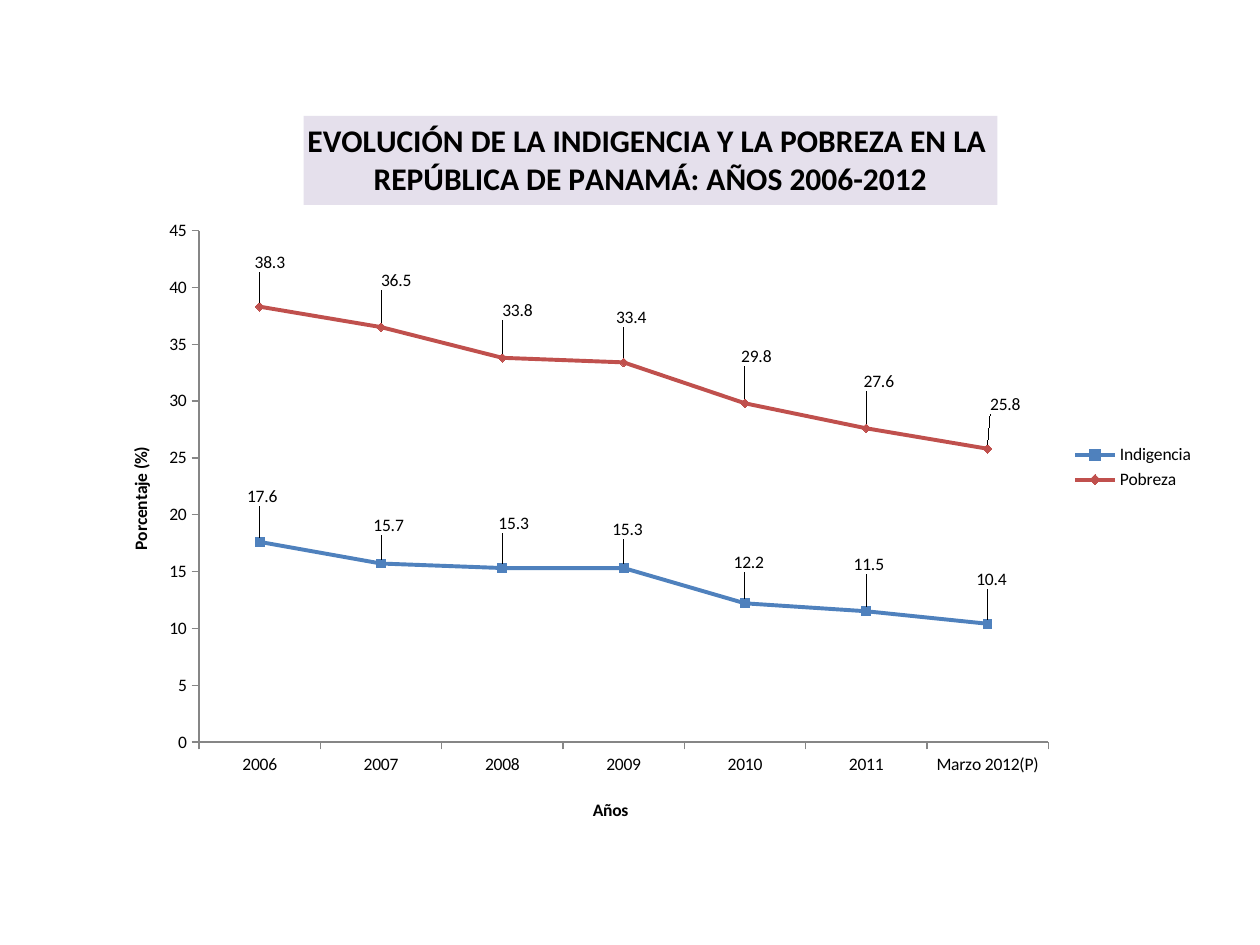
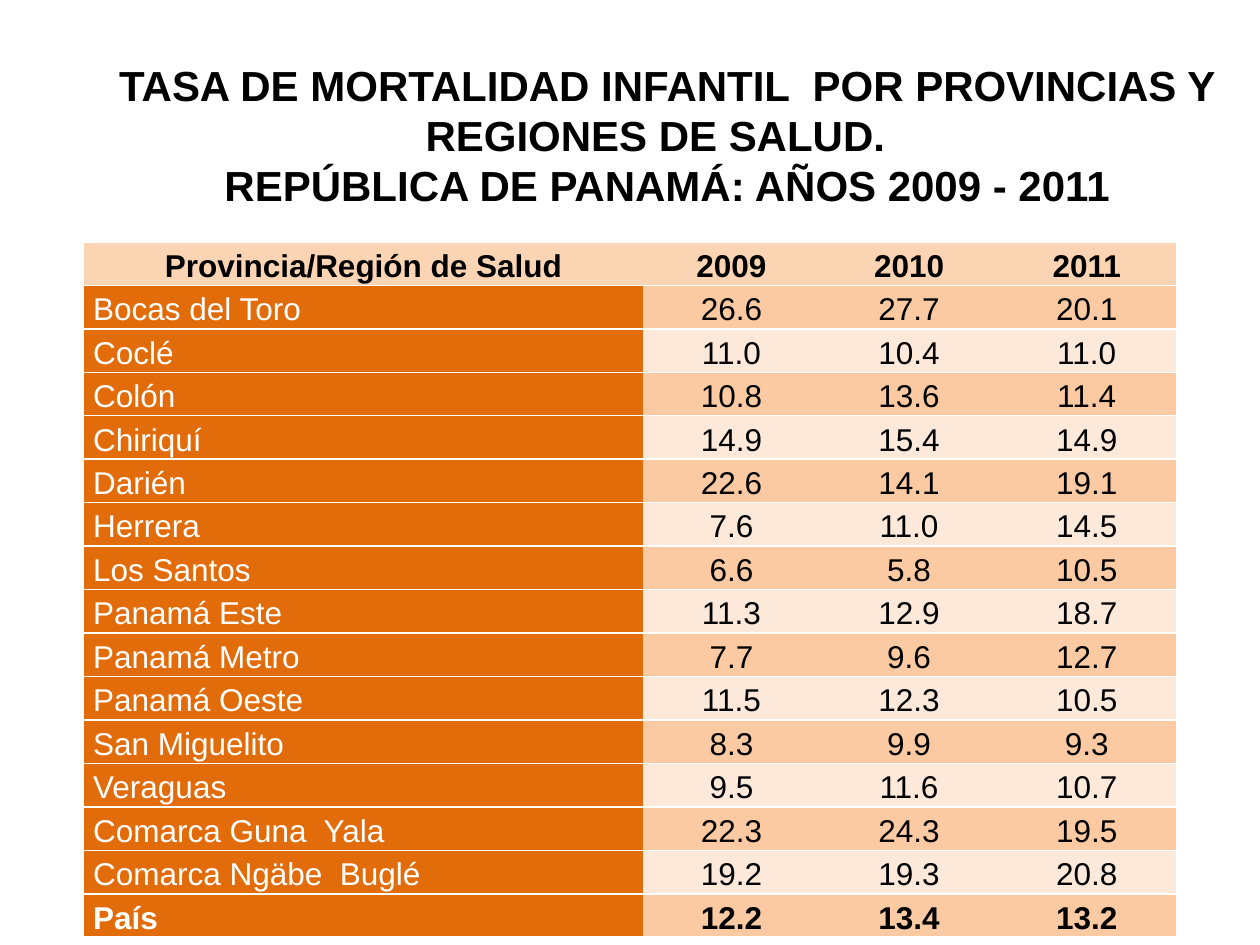
from dataclasses import dataclass

from pptx import Presentation
from pptx.chart.data import CategoryChartData
from pptx.dml.color import RGBColor
from pptx.enum.chart import (XL_CHART_TYPE as ChartType, XL_LABEL_POSITION as LabelPosition,
                             XL_LEGEND_POSITION as LegendPosition,
                             XL_MARKER_STYLE as Marker, XL_TICK_MARK as Tick)
from pptx.enum.text import MSO_ANCHOR as Anchor, PP_ALIGN as Align
from pptx.oxml import parse_xml
from pptx.oxml.ns import nsdecls
from pptx.util import Inches, Pt


@dataclass(frozen=True)
class Theme:
    black: str = "000000"
    white: str = "FFFFFF"
    axis: str = "868686"
    title_band: str = "E5E0EC"
    header: str = "FBD4B4"
    region: str = "E36C0A"
    odd_row: str = "FBCAA2"
    even_row: str = "FDE9D9"
    chart_font: str = "Calibri"
    text_font: str = "Arial"
    heading_size: int = 24
    chart_title_size: int = 18
    table_size: int = 18
    chart_size: int = 10


THEME = Theme()

CHART_LEFT, CHART_TOP, CHART_WIDTH, CHART_HEIGHT = 0.75, 0.75, 8.83, 5.92
CHART_TITLE = ("EVOLUCIÓN DE LA INDIGENCIA Y LA POBREZA EN LA \n"
               "REPÚBLICA DE PANAMÁ: AÑOS 2006-2012")
YEARS = ["2006", "2007", "2008", "2009", "2010", "2011", "Marzo 2012(P)"]


@dataclass(frozen=True)
class Indicator:
    """One line of the chart; label_shifts are inches from the place above each point."""
    name: str
    rates: tuple
    color: str
    marker: Marker
    label_shifts: tuple


INDICATORS = [
    Indicator("Indigencia", (17.6, 15.7, 15.3, 15.3, 12.2, 11.5, 10.4), "4F81BD", Marker.SQUARE,
              ((0.02, -0.21), (0.06, -0.15), (0.09, -0.2), (0.03, -0.15),
               (0.03, -0.17), (0.02, -0.22), (0.03, -0.2))),
    Indicator("Pobreza", (38.3, 36.5, 33.8, 33.4, 29.8, 27.6, 25.8), "C0504D", Marker.DIAMOND,
              ((0.08, -0.2), (0.12, -0.22), (0.12, -0.22), (0.06, -0.2),
               (0.09, -0.22), (0.1, -0.22), (0.14, -0.2))),
]

HEADING = ("TASA DE MORTALIDAD INFANTIL  POR PROVINCIAS Y REGIONES DE SALUD.  \n"
           "REPÚBLICA DE PANAMÁ: AÑOS 2009 - 2011")
COLUMN_WIDTHS = [4.43, 1.41, 1.41, 1.41]
TABLE_HEIGHT = 5.52
MORTALITY = [
    ("Provincia/Región de Salud", "2009", "2010", "2011"),
    ("Bocas del Toro", "26.6", "27.7", "20.1"),
    ("Coclé", "11.0", "10.4", "11.0"),
    ("Colón", "10.8", "13.6", "11.4"),
    ("Chiriquí", "14.9", "15.4", "14.9"),
    ("Darién", "22.6", "14.1", "19.1"),
    ("Herrera", "7.6", "11.0", "14.5"),
    ("Los Santos", "6.6", "5.8", "10.5"),
    ("Panamá Este", "11.3", "12.9", "18.7"),
    ("Panamá Metro", "7.7", "9.6", "12.7"),
    ("Panamá Oeste", "11.5", "12.3", "10.5"),
    ("San Miguelito", "8.3", "9.9", "9.3"),
    ("Veraguas", "9.5", "11.6", "10.7"),
    ("Comarca Guna  Yala", "22.3", "24.3", "19.5"),
    ("Comarca Ngäbe  Buglé", "19.2", "19.3", "20.8"),
    ("País", "12.2", "13.4", "13.2"),
]


def rgb(color):
    return RGBColor.from_string(color)


def style_font(font, name, size, color=THEME.black, bold=False):
    font.name, font.size, font.bold = name, Pt(size), bold
    font.color.rgb = rgb(color)


def style_text(frame, name, size, color=THEME.black, bold=False, align=Align.CENTER):
    for paragraph in frame.paragraphs:
        paragraph.alignment = align
        for run in paragraph.runs:
            style_font(run.font, name, size, color, bold)


def place(part, index, x, y, width=None, height=None, shift=False):
    """Lay out a chart part in inches; a shift is relative to its automatic place."""
    for old in part.findall("{*}layout"):
        part.remove(old)
    target = "" if width is None else '<c:layoutTarget val="inner"/>'
    modes = "" if shift else '<c:xMode val="edge"/><c:yMode val="edge"/>'
    sizes = "" if width is None else (f'<c:w val="{width / CHART_WIDTH:.4f}"/>'
                                      f'<c:h val="{height / CHART_HEIGHT:.4f}"/>')
    part.insert(index, parse_xml(
        f'<c:layout {nsdecls("c")}><c:manualLayout>{target}{modes}'
        f'<c:x val="{x / CHART_WIDTH:.4f}"/><c:y val="{y / CHART_HEIGHT:.4f}"/>'
        f'{sizes}</c:manualLayout></c:layout>'))


def title_chart_part(title, text, size, x, y):
    title.text_frame.text = text
    style_text(title.text_frame, THEME.chart_font, size, bold=True)
    place(title._element, 1, x, y)


def style_axis(axis, title, x, y):
    axis.has_major_gridlines = False
    axis.major_tick_mark, axis.minor_tick_mark = Tick.OUTSIDE, Tick.NONE
    axis.format.line.color.rgb = rgb(THEME.axis)
    axis.format.line.width = Pt(0.75)
    title_chart_part(axis.axis_title, title, THEME.chart_size, x, y)


def style_indicator(series, indicator):
    series.smooth = False
    series.format.line.color.rgb = rgb(indicator.color)
    series.format.line.width = Pt(2.25)
    series.marker.style, series.marker.size = indicator.marker, 5
    series.marker.format.fill.solid()
    series.marker.format.fill.fore_color.rgb = rgb(indicator.color)
    series.marker.format.line.color.rgb = rgb(indicator.color)
    series.data_labels.show_value = True
    series.data_labels.position = LabelPosition.ABOVE
    for number, shift in enumerate(indicator.label_shifts):
        series.points[number].data_label.position = LabelPosition.ABOVE
        label = series.data_labels._element.findall("{*}dLbl")[number]
        place(label, 1, *shift, shift=True)


def add_poverty_chart(slide):
    poverty = CategoryChartData(number_format="0.0")
    poverty.categories = YEARS
    for indicator in INDICATORS:
        poverty.add_series(indicator.name, indicator.rates)
    chart = slide.shapes.add_chart(
        ChartType.LINE_MARKERS, Inches(CHART_LEFT), Inches(CHART_TOP),
        Inches(CHART_WIDTH), Inches(CHART_HEIGHT), poverty).chart
    style_font(chart.font, THEME.chart_font, THEME.chart_size)

    title_chart_part(chart.chart_title, CHART_TITLE, THEME.chart_title_size, 1.66, 0.17)
    band = chart.chart_title.format.fill
    band.solid()
    band.fore_color.rgb = rgb(THEME.title_band)

    style_axis(chart.category_axis, "Años", 3.93, 5.56)
    style_axis(chart.value_axis, "Porcentaje (%)", 0.25, 2.77)
    chart.value_axis.minimum_scale, chart.value_axis.maximum_scale = 0, 45
    chart.value_axis.major_unit = 5
    chart.value_axis.tick_labels.number_format = "0"
    chart.value_axis.tick_labels.number_format_is_linked = False

    chart.has_legend = True
    chart.legend.position = LegendPosition.RIGHT
    chart.legend.include_in_layout = False
    chart.plots[0].vary_by_categories = False
    for series, indicator in zip(chart.plots[0].series, INDICATORS):
        style_indicator(series, indicator)
    place(chart._chartSpace.chart.plotArea, 0, 0.83, 1.08, 6.74, 4.06)


def add_heading(slide):
    frame = slide.shapes.add_textbox(Inches(0.83), Inches(0.42),
                                     Inches(8.93), Inches(1.31)).text_frame
    frame.word_wrap = True
    frame.text = HEADING
    style_text(frame, THEME.text_font, THEME.heading_size, bold=True)


def rule_cell(cell):
    """Draw white lines above and below the cell and none at its sides."""
    line = f'<a:solidFill><a:srgbClr val="{THEME.white}"/></a:solidFill>'
    sides = {"lnL": "<a:noFill/>", "lnR": "<a:noFill/>", "lnT": line, "lnB": line}
    for index, (side, paint) in enumerate(sides.items()):
        cell._tc.get_or_add_tcPr().insert(index, parse_xml(
            f'<a:{side} {nsdecls("a")} w="{Pt(1)}">{paint}</a:{side}>'))


def fill_cell(cell, text, fill, color, bold, align):
    cell.text = text
    cell.vertical_anchor = Anchor.MIDDLE
    cell.margin_left = cell.margin_right = Inches(0.07)
    cell.margin_top = cell.margin_bottom = 0
    cell.fill.solid()
    cell.fill.fore_color.rgb = rgb(fill)
    cell.text_frame.paragraphs[0].line_spacing = 1.15
    style_text(cell.text_frame, THEME.text_font, THEME.table_size, color, bold, align)
    rule_cell(cell)


def add_mortality_table(slide):
    table = slide.shapes.add_table(
        len(MORTALITY), len(COLUMN_WIDTHS), Inches(0.67), Inches(1.92),
        Inches(sum(COLUMN_WIDTHS)), Inches(TABLE_HEIGHT)).table
    table.first_row = table.horz_banding = False
    for column, width in zip(table.columns, COLUMN_WIDTHS):
        column.width = Inches(width)
    last = len(MORTALITY) - 1
    for r, record in enumerate(MORTALITY):
        table.rows[r].height = Inches(TABLE_HEIGHT / len(MORTALITY))
        for c, text in enumerate(record):
            is_region = c == 0 and r > 0
            if r == 0:
                fill = THEME.header
            elif is_region:
                fill = THEME.region
            else:
                fill = THEME.odd_row if r % 2 else THEME.even_row
            fill_cell(table.cell(r, c), text, fill,
                      color=THEME.white if is_region else THEME.black,
                      bold=r in (0, last),
                      align=Align.LEFT if is_region else Align.CENTER)


def main():
    deck = Presentation()
    deck.slide_width, deck.slide_height = Inches(10), Inches(7.5)
    blank = deck.slide_layouts[6]
    add_poverty_chart(deck.slides.add_slide(blank))
    mortality_slide = deck.slides.add_slide(blank)
    add_mortality_table(mortality_slide)
    add_heading(mortality_slide)
    deck.save("out.pptx")


if __name__ == "__main__":
    main()
